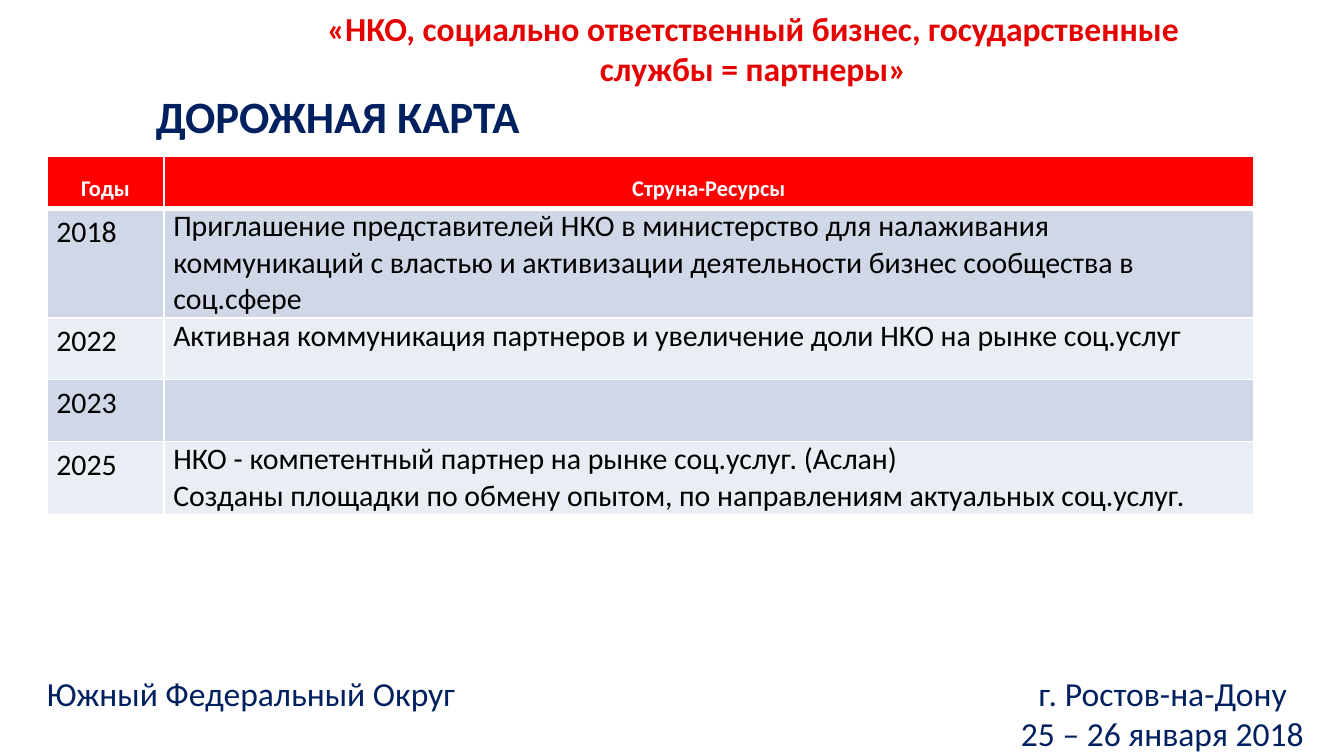
from lxml.etree import SubElement
from pptx import Presentation
from pptx.dml.color import RGBColor
from pptx.enum.text import MSO_ANCHOR, MSO_AUTO_SIZE, PP_ALIGN
from pptx.oxml import parse_xml
from pptx.oxml.ns import nsdecls, qn
from pptx.util import Inches, Pt

NAVY = RGBColor(0x00, 0x20, 0x60)
CRIMSON = RGBColor(0xE6, 0x00, 0x00)
RED = RGBColor(0xFF, 0x00, 0x00)
WHITE = RGBColor(0xFF, 0xFF, 0xFF)
BLACK = RGBColor(0x00, 0x00, 0x00)
BANDS = RGBColor(0xD0, 0xD8, 0xE8), RGBColor(0xE9, 0xED, 0xF4)

ROWS = [
    ("Годы", "Струна-Ресурсы"),
    ("2018", "Приглашение представителей НКО в министерство для налаживания "
             "коммуникаций с властью и активизации деятельности бизнес сообщества "
             "в соц.сфере"),
    ("2022", "Активная коммуникация партнеров и увеличение доли НКО на рынке соц.услуг"),
    ("2023", ""),
    ("2025", "НКО - компетентный партнер на рынке соц.услуг. (Аслан)\n"
             "Созданы площадки по обмену опытом, по направлениям актуальных соц.услуг."),
]
COL_WIDTHS = 0.87, 8.11
HEADER_HEIGHT = 0.39
ROW_HEIGHT = 0.46


def write(tf, text, size=18, color=NAVY, bold=False, align=PP_ALIGN.LEFT, spacing=1.0):
    for i, line in enumerate(text.split("\n")):
        p = tf.add_paragraph() if i else tf.paragraphs[0]
        p.alignment = align
        p.line_spacing = spacing
        p.space_before = Pt(0)
        r = p.add_run()
        r.text = line
        r.font.name = "Calibri"
        r.font.size = Pt(size)
        r.font.bold = bold
        r.font.color.rgb = color


class SlideBuilder:
    font = {"color": NAVY}

    def __init__(self, prs):
        self.s = prs.slides.add_slide(prs.slide_layouts[5])

    def title(self, text, box):
        sp = self.s.shapes.title
        sp.left, sp.top, sp.width, sp.height = map(Inches, box)
        tf = sp.text_frame
        tf.vertical_anchor = MSO_ANCHOR.TOP
        tf.auto_size = MSO_AUTO_SIZE.NONE
        write(tf, text, size=24, bold=True, **self.font)

    def text(self, text, box, **fmt):
        tf = self.s.shapes.add_textbox(*map(Inches, box)).text_frame
        tf.word_wrap = True
        tf.vertical_anchor = MSO_ANCHOR.MIDDLE
        write(tf, text, **{**self.font, **fmt})
        return tf

    def footer(self, place, city, dates, box, tab):
        tf = self.text(f"{place}\t{city}\n{dates}", box)
        first, last = tf.paragraphs
        last.alignment = PP_ALIGN.RIGHT
        tabs = SubElement(first._p.get_or_add_pPr(), qn("a:tabLst"))
        SubElement(tabs, qn("a:tab"), pos=str(Inches(tab)), algn="l")

    def borders(self, cell, top, bottom):
        tcPr = cell._tc.get_or_add_tcPr()
        for i, (side, width) in enumerate(zip("LRTB", (1, 1, top, bottom))):
            tcPr.insert(i, parse_xml(
                f'<a:ln{side} {nsdecls("a")} w="{Pt(width)}"><a:solidFill>'
                f'<a:srgbClr val="{WHITE}"/></a:solidFill></a:ln{side}>'))

    def table(self, rows, left, top):
        heights = [HEADER_HEIGHT] + [ROW_HEIGHT] * (len(rows) - 1)
        size = sum(COL_WIDTHS), sum(heights)
        table = self.s.shapes.add_table(
            len(rows), len(COL_WIDTHS), *map(Inches, (left, top, *size))).table
        for col, width in zip(table.columns, COL_WIDTHS):
            col.width = Inches(width)
        for i, (height, values) in enumerate(zip(heights, rows)):
            table.rows[i].height = Inches(height)
            for j, value in enumerate(values):
                self.cell(table.cell(i, j), value, i, j)

    def cell(self, cell, value, i, j):
        header = i == 0
        cell.fill.solid()
        cell.fill.fore_color.rgb = RED if header else BANDS[(i - 1) % 2]
        cell.margin_left = cell.margin_right = Inches(0.1 if header else 0.07)
        cell.margin_top = cell.margin_bottom = Inches(0.04 if header else 0)
        self.borders(cell, top=3 if i == 1 else 1, bottom=3 if header else 1)
        if header:
            write(cell.text_frame, value, size=12, color=WHITE, bold=True,
                  align=PP_ALIGN.CENTER, spacing=1.5)
        elif value:
            write(cell.text_frame, value, size=16, color=BLACK,
                  spacing=1.15 if j == 0 else 1.0)


def main():
    prs = Presentation()
    prs.slide_width = Inches(10)
    prs.slide_height = prs.slide_width * 9 // 16
    slide = SlideBuilder(prs)
    slide.title("ДОРОЖНАЯ КАРТА", (1.06, 0.61, 5, 0.5))
    slide.table(ROWS, 0.35, 1.16)
    slide.footer("Южный Федеральный Округ", "г. Ростов-на-Дону",
                 "25 – 26 января 2018", (0.25, 5.08, 9.55, 0.45), tab=7.38)
    slide.text("«НКО, социально ответственный бизнес, государственные службы = партнеры»",
               (2.03, 0.21, 7.15, 0.3), color=CRIMSON, bold=True, align=PP_ALIGN.CENTER)
    prs.save("out.pptx")


if __name__ == "__main__":
    main()
